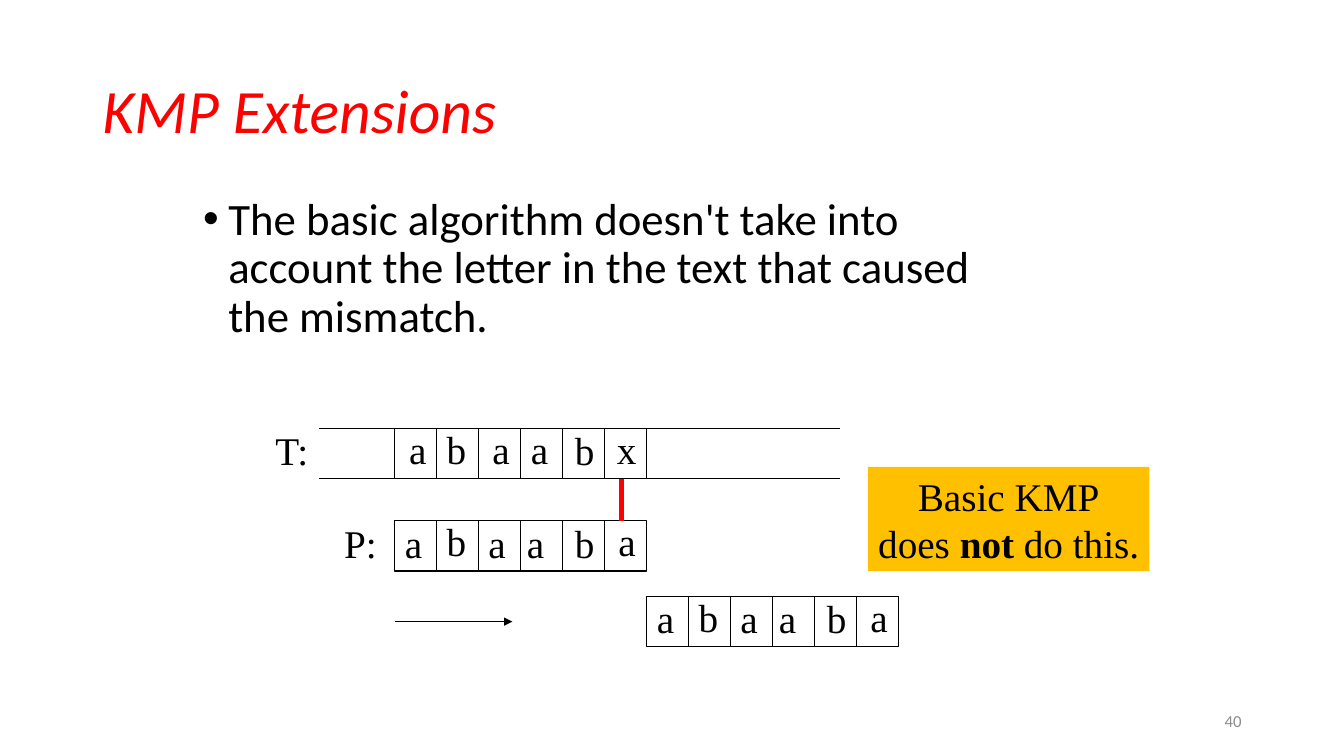
import pptx
import pptx.util
import pptx.dml.color
import pptx.enum.shapes
import pptx.enum.text
import lxml.etree

Pt = pptx.util.Pt
RGBColor = pptx.dml.color.RGBColor
ALIGN = pptx.enum.text.PP_ALIGN
MIDDLE = pptx.enum.text.MSO_ANCHOR.MIDDLE
FIT = pptx.enum.text.MSO_AUTO_SIZE
RECT = pptx.enum.shapes.MSO_SHAPE.RECTANGLE
STRAIGHT = pptx.enum.shapes.MSO_CONNECTOR.STRAIGHT
A = "{http://schemas.openxmlformats.org/drawingml/2006/main}"

BLACK = RGBColor(0, 0, 0)
RED = RGBColor(0xFF, 0, 0)
GOLD = RGBColor(0xFF, 0xC0, 0)
GRAY = RGBColor(0x8C, 0x8C, 0x8C)
SERIF = "Times New Roman"
SANS = "Calibri"
CELL, HIGH = 30, 36


def draw_line(host, x1, y1, x2, y2, color=BLACK, width=1):
    line = host.add_connector(STRAIGHT, Pt(x1), Pt(y1), Pt(x2), Pt(y2))
    line.line.color.rgb = color
    line.line.width = Pt(width)
    lxml.etree.SubElement(line._element.spPr, A + "effectLst")
    return line


def add_label(host, text, center, top, width=28):
    box = host.add_textbox(Pt(center - width / 2), Pt(top), Pt(width), Pt(41))
    frame = box.text_frame
    frame.word_wrap = False
    frame.auto_size = FIT.SHAPE_TO_FIT_TEXT
    frame.vertical_anchor = MIDDLE
    par = frame.paragraphs[0]
    par.text = text
    par.alignment = ALIGN.CENTER
    par.font.name, par.font.size = SERIF, Pt(28)
    par.font.color.rgb = BLACK


deck = pptx.Presentation()
deck.slide_width, deck.slide_height = Pt(960), Pt(540)
slide = deck.slides.add_slide(deck.slide_layouts[5])
shapes = slide.shapes

# Title
title = shapes.title
title.left, title.top, title.width, title.height = Pt(66), Pt(28.8), Pt(828), Pt(104.4)
frame = title.text_frame
frame.vertical_anchor = MIDDLE
frame.auto_size = FIT.NONE
par = frame.paragraphs[0]
par.text = "KMP Extensions"
par.alignment = ALIGN.LEFT
par.line_spacing = 0.9
par.font.name, par.font.size, par.font.italic = SANS, Pt(44), True
par.font.color.rgb = RED

# Bullet text
body = shapes.add_textbox(Pt(138), Pt(136.8), Pt(612), Pt(138))
body.text_frame.word_wrap = True
par = body.text_frame.paragraphs[0]
par.text = ("The basic algorithm doesn't take into account "
            "the letter in the text that caused the mismatch.")
par.line_spacing = 0.9
props = par._p.get_or_add_pPr()
props.set("marL", str(Pt(18)))
props.set("indent", str(Pt(-18)))
lxml.etree.SubElement(props, A + "buFont", typeface="Arial")
lxml.etree.SubElement(props, A + "buChar", char="•")
par.font.name, par.font.size = SANS, Pt(32)
par.font.color.rgb = BLACK

# Text row T: letters as (letter, center from row start, rise above row)
text = [("a", 16.5, 6), ("b", 44, 6), ("a", 76, 6),
        ("a", 103.5, 6), ("b", 135.5, 5), ("x", 165.5, 6)]
for y in (306, 306 + HIGH):
    draw_line(shapes, 228, y, 600, y)
for i in range(len(text) + 1):
    draw_line(shapes, 282 + i * CELL, 306, 282 + i * CELL, 306 + HIGH)
for letter, center, rise in text:
    add_label(shapes, letter, 282 + center, 306 - rise)

# Pattern row P, before and after the shift
pattern = [("a", 13.5, 5), ("b", 44, 6), ("a", 73, 5),
           ("a", 100.5, 5), ("b", 135.5, 5), ("a", 166, 6)]
for x, y in ((282, 372), (462, 426)):
    row = shapes.add_group_shape().shapes
    frame = row.add_shape(RECT, Pt(x), Pt(y), Pt(len(pattern) * CELL), Pt(HIGH))
    frame.shadow.inherit = False
    frame.fill.background()
    frame.line.color.rgb = BLACK
    frame.line.width = Pt(1)
    for i in range(1, len(pattern)):
        draw_line(row, x + i * CELL, y, x + i * CELL, y + HIGH)
    for letter, center, rise in pattern:
        add_label(row, letter, x + center, y - rise)

# Mismatch mark, shift arrow and row names
draw_line(shapes, 444, 342, 444, 372, RED, 3)
arrow = draw_line(shapes, 282, 444, 366, 444)
lxml.etree.SubElement(arrow.line._get_or_add_ln(), A + "tailEnd", type="triangle")
add_label(shapes, "T:", 208.5, 301, 40)
add_label(shapes, "P:", 257.5, 367, 38)

# Note
note = shapes.add_shape(RECT, Pt(620), Pt(333.5), Pt(201), Pt(74.5))
note.shadow.inherit = False
note.fill.solid()
note.fill.fore_color.rgb = GOLD
note.line.fill.background()
frame = note.text_frame
frame.word_wrap = False
frame.auto_size = FIT.SHAPE_TO_FIT_TEXT
frame.vertical_anchor = MIDDLE
frame.text = "Basic KMP\n"
for part in ("does ", "not", " do this."):
    run = frame.paragraphs[1].add_run()
    run.text = part
    run.font.bold = part == "not"
for par in frame.paragraphs:
    par.alignment = ALIGN.CENTER
    par.font.name, par.font.size = SERIF, Pt(28)
    par.font.color.rgb = BLACK

# Page number
page = shapes.add_textbox(Pt(678), Pt(500.5), Pt(216), Pt(28.8))
page.text_frame.word_wrap = True
page.text_frame.vertical_anchor = MIDDLE
par = page.text_frame.paragraphs[0]
par.text = "40"
par.alignment = ALIGN.RIGHT
par.font.name, par.font.size = SANS, Pt(12)
par.font.color.rgb = GRAY

deck.save("out.pptx")
